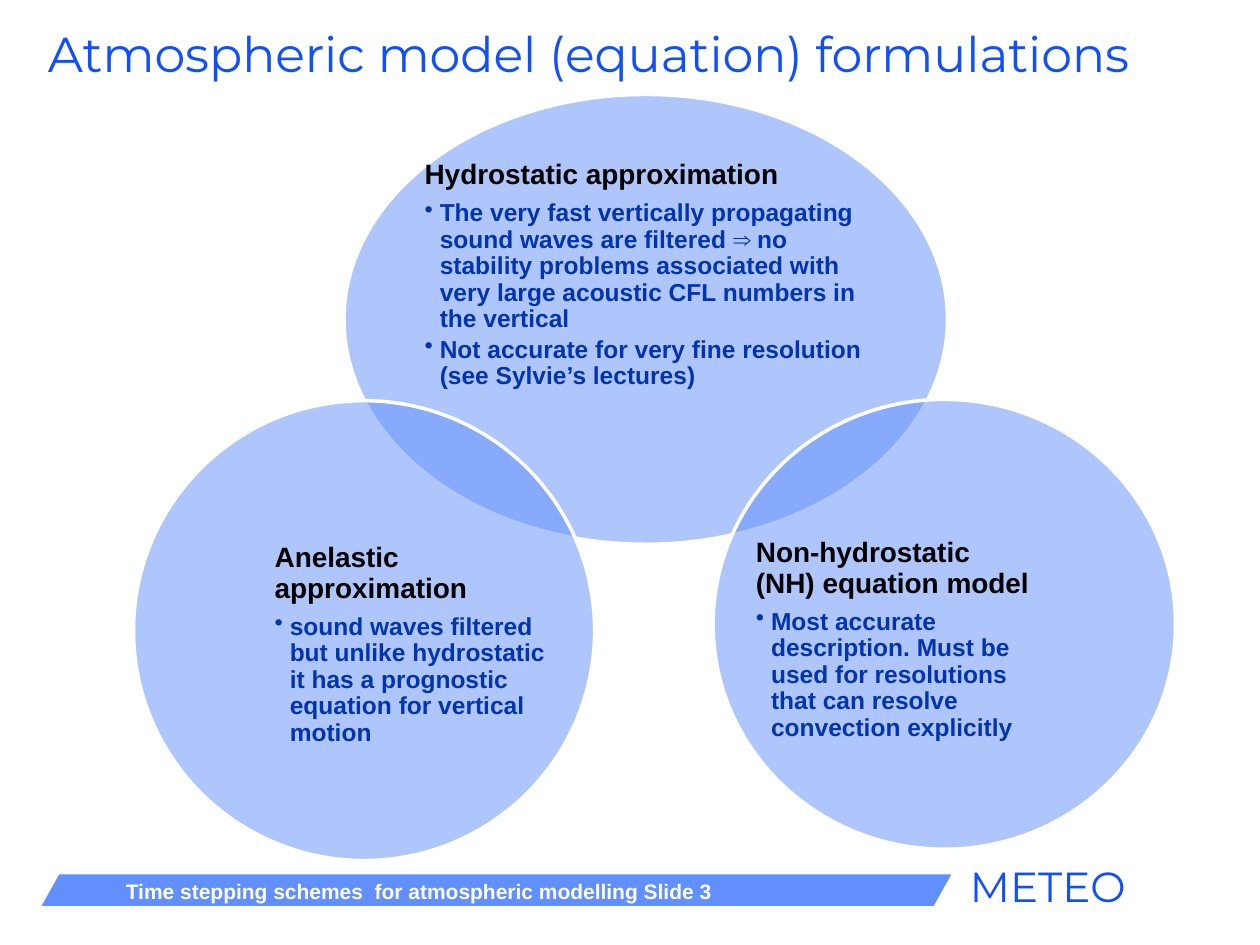
from lxml import etree
from pptx import Presentation
from pptx import util as u
from pptx.dml.color import RGBColor
from pptx.enum import shapes, text
from pptx.oxml.ns import qn

PX = 9144
COLORS = {"title": "114FFB", "fill": "618FFD", "white": "FFFFFF",
          "heading": "000000", "body": "0234AD"}
VENN = [
    ((273, 75, 479, 357), (64, 63, 351, 161), "Hydrostatic approximation", [
        "The very fast vertically propagating sound waves are filtered ⇒ no stability "
        "problems associated with very large acoustic CFL numbers in the vertical",
        "Not accurate for very fine resolution (see Sylvie’s lectures)"]),
    ((106, 318, 366, 365), (112, 94, 219, 200), "Anelastic approximation", [
        "sound waves filtered but unlike hydrostatic it has a prognostic equation "
        "for vertical motion"]),
    ((566, 317, 367, 357), (34, 93, 220, 196), "Non-hydrostatic (NH) equation model", [
        "Most accurate description. Must be used for resolutions that can resolve "
        "convection explicitly"]),
]


def color(name):
    return RGBColor.from_string(COLORS[name])


def emu(*lengths):
    return [u.Emu(length * PX) for length in lengths]


def style(para, size, tint, font="Arial", bold=True):
    para.font.name = font
    para.font.size = u.Pt(size)
    para.font.bold = bold
    para.font.color.rgb = color(tint)


def add_shape(page, kind, box):
    shape = page.shapes.add_shape(kind, *emu(*box))
    shape.shadow.inherit = False
    shape.fill.solid()
    shape.fill.fore_color.rgb = color("fill")
    return shape


def add_label(page, box, words, **look):
    frame = page.shapes.add_textbox(*emu(*box)).text_frame
    frame.word_wrap = False
    frame.paragraphs[0].text = words
    style(frame.paragraphs[0], **look)


def add_title(page, box, words):
    title = page.shapes.title
    title.left, title.top, title.width, title.height = emu(*box)
    frame = title.text_frame
    frame.vertical_anchor = text.MSO_ANCHOR.MIDDLE
    frame.text = words
    para = frame.paragraphs[0]
    para.alignment = text.PP_ALIGN.LEFT
    style(para, 28, "title", "Montserrat", False)


def add_footer(page, box):
    left, top, width, height = box
    band = add_shape(page, shapes.MSO_SHAPE.PARALLELOGRAM, (left, top + 16, 722, 25))
    band.adjustments[0] = 0.56
    band.line.fill.background()
    add_label(page, (left + 57, top + 14, 509, 30),
              "Time stepping schemes  for atmospheric modelling Slide 3",
              size=12, tint="white")
    add_label(page, (left + width - 157, top, 157, height), "METEO",
              size=24, tint="title", font="Montserrat", bold=False)


def add_bullet(para):
    para.level = 1
    props = para._p.get_or_add_pPr()
    props.set("marL", str(u.Inches(0.12)))
    props.set("indent", str(-u.Inches(0.12)))
    etree.SubElement(props, qn("a:buChar")).set("char", "•")


def add_circle(page, box, inset, heading, points):
    left, top = box[:2]
    circle = add_shape(page, shapes.MSO_SHAPE.OVAL, box)
    fill = circle._element.spPr.find(qn("a:solidFill"))
    etree.SubElement(fill[0], qn("a:alpha")).set("val", "50000")
    circle.line.color.rgb = color("white")
    circle.line.width = u.Pt(2)

    area = (left + inset[0], top + inset[1], inset[2], inset[3])
    frame = page.shapes.add_textbox(*emu(*area)).text_frame
    frame.word_wrap = True
    frame.vertical_anchor = text.MSO_ANCHOR.MIDDLE
    frame.margin_left = frame.margin_right = 0
    frame.margin_top = frame.margin_bottom = 0
    frame.text = "\n".join([heading, *points])
    for index, para in enumerate(frame.paragraphs):
        para.line_spacing = 0.9
        para.space_after = u.Pt(2.1 if index else 5.6)
        if index:
            add_bullet(para)
        style(para, 14 if index else 16, "body" if index else "heading")


def main():
    deck = Presentation()
    deck.slide_width, deck.slide_height = emu(1000, 750)
    page = deck.slides.add_slide(deck.slide_layouts[5])
    add_footer(page, (33, 678, 884, 57))
    add_title(page, (28, 13, 945, 58), "Atmospheric model (equation) formulations")
    for circle in VENN:
        add_circle(page, *circle)
    deck.save("out.pptx")


if __name__ == "__main__":
    main()
